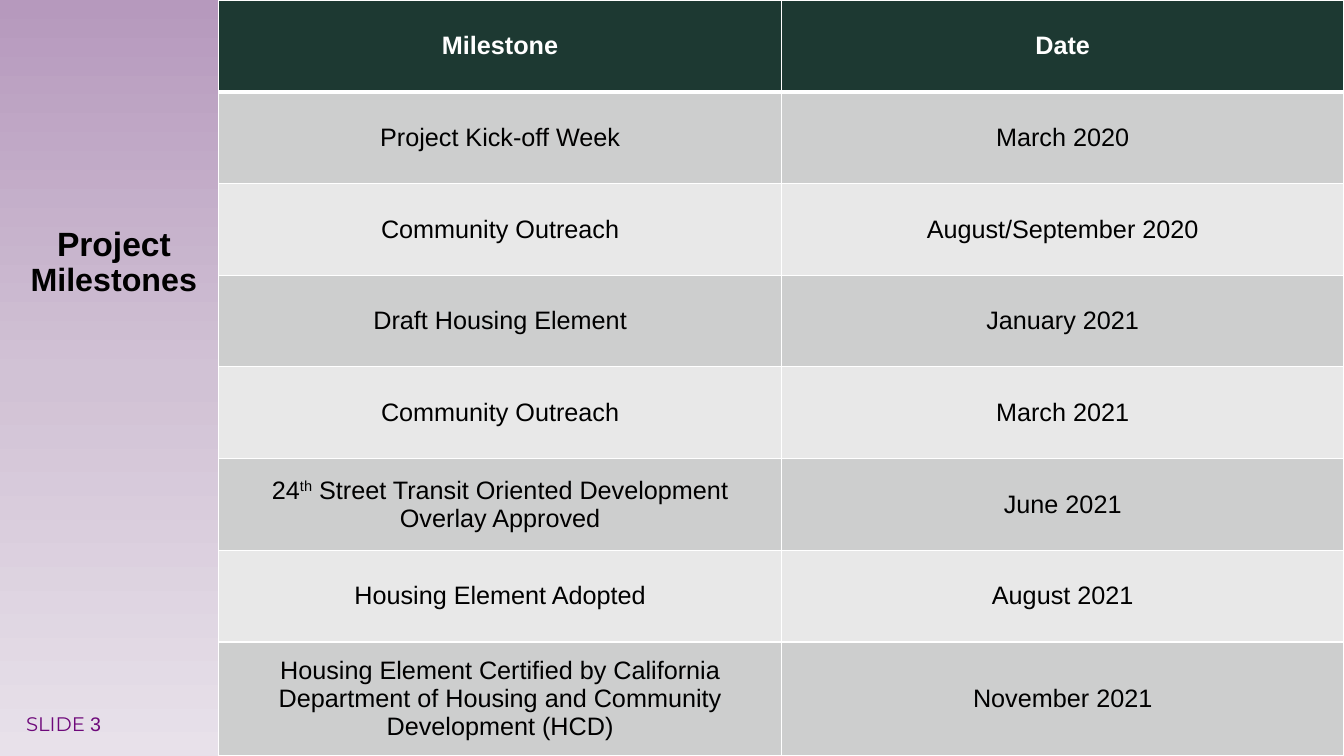
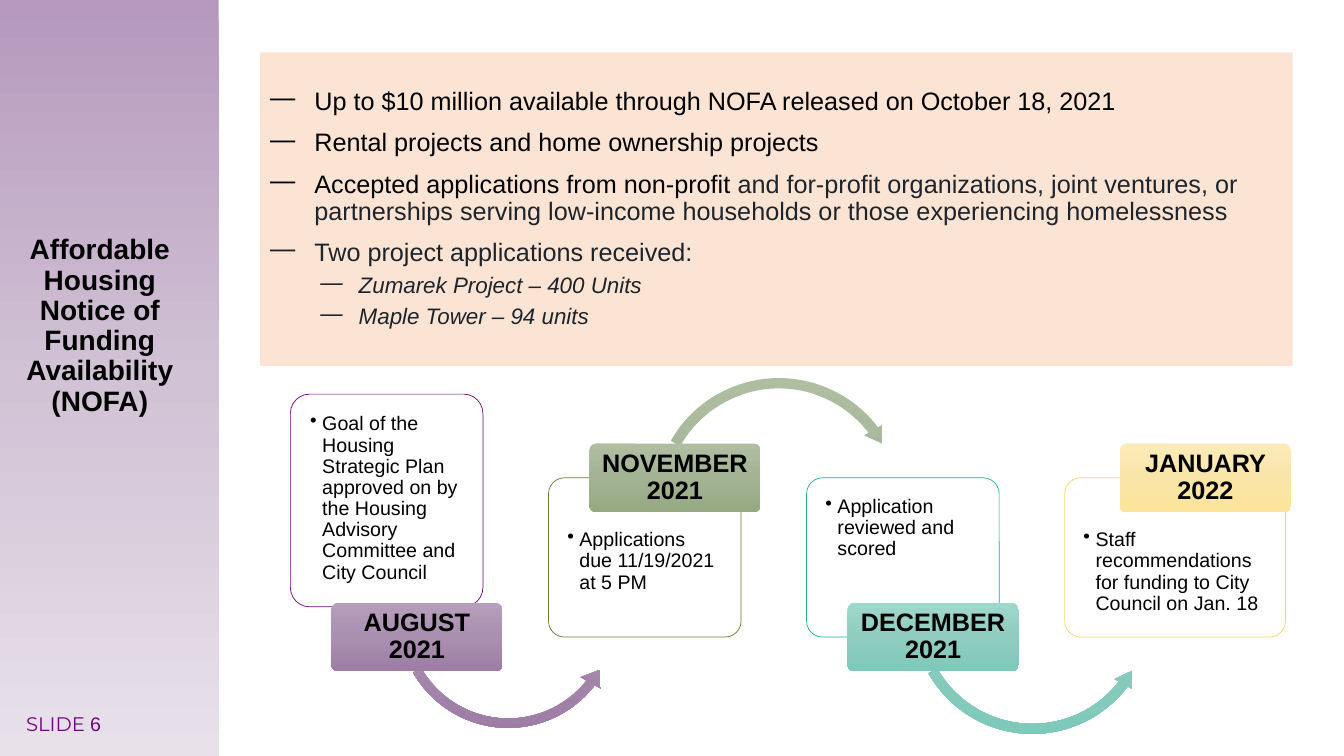
from lxml import etree
from pptx import Presentation
from pptx.dml.color import RGBColor
from pptx.enum.shapes import MSO_SHAPE
from pptx.enum.text import MSO_ANCHOR, PP_ALIGN
from pptx.oxml.ns import qn
from pptx.util import Inches, Pt

RECT, ROUND = MSO_SHAPE.RECTANGLE, MSO_SHAPE.ROUNDED_RECTANGLE
ARC_UP, ARC_DOWN = MSO_SHAPE.CIRCULAR_ARROW, MSO_SHAPE.LEFT_CIRCULAR_ARROW
TOP, MIDDLE, BOTTOM = MSO_ANCHOR.TOP, MSO_ANCHOR.MIDDLE, MSO_ANCHOR.BOTTOM
LEFT, CENTER = PP_ALIGN.LEFT, PP_ALIGN.CENTER

# Shared theme
W, H = 13.33, 7.5
BAND_W = 2.17
FONT, FOOTER_FONT = "Arial", "Montserrat"
BLACK, WHITE, INK, PURPLE = "000000", "FFFFFF", "1E242B", "6E087A"
BAND_STOPS = ("B699BD", "D1C2D5", "E8E1EA")
HEADER, ROW_DARK, ROW_LIGHT, PEACH = "1D3932", "CDCECE", "E8E8E8", "FBE4D3"

# Timeline measures
CARD_W, PILL_W, PILL_H = 1.91, 1.7, 0.68
PILL_SHIFT = 0.3  # pill centre, right of the card centre
BULLET_INSET = 0.14


def rgb(value):
    return RGBColor.from_string(value)


def style(r, size, color=BLACK, bold=False, italic=False, font=FONT):
    f = r.font
    f.name, f.size, f.bold, f.italic = font, Pt(size), bold, italic
    f.color.rgb = rgb(color)


def add_run(p, text, size, **look):
    r = p.add_run()
    r.text = text
    style(r, size, **look)
    return r


def set_frame(tf, anchor=TOP, insets=(0.1, 0.05, 0.1, 0.05)):
    tf.word_wrap = True
    tf.vertical_anchor = anchor
    tf.margin_left, tf.margin_top, tf.margin_right, tf.margin_bottom = map(Inches, insets)
    return tf


def set_bullet(p, char, margin, hang):
    pPr = p._p.get_or_add_pPr()
    pPr.set("marL", str(Inches(margin)))
    pPr.set("indent", str(-Inches(hang)))
    etree.SubElement(pPr, qn("a:buChar")).set("char", char)


def set_gradient(sp, stops):
    """Fill from top to bottom with evenly spaced stops."""
    sp.fill.gradient()
    sp.fill.gradient_angle = 270
    gs_lst = sp._element.spPr.find(".//" + qn("a:gsLst"))
    for gs in list(gs_lst):
        gs_lst.remove(gs)
    for i, color in enumerate(stops):
        gs = etree.SubElement(gs_lst, qn("a:gs"))
        gs.set("pos", str(100000 * i // (len(stops) - 1)))
        etree.SubElement(gs, qn("a:srgbClr")).set("val", color)


def add_shape(s, kind, box, fill, line=None, adj=()):
    """Add a preset shape; a tuple as fill gives a gradient."""
    sp = s.shapes.add_shape(kind, *map(Inches, box))
    sp.shadow.inherit = False
    for i, value in enumerate(adj):
        sp.adjustments[i] = value
    if isinstance(fill, tuple):
        set_gradient(sp, fill)
    else:
        sp.fill.solid()
        sp.fill.fore_color.rgb = rgb(fill)
    if line:
        sp.line.color.rgb = rgb(line)
        sp.line.width = Pt(0.5)
    else:
        sp.line.fill.background()
    return sp


def add_sidebar(s, number, title_runs, box, anchor):
    """Purple band, slide title and footer."""
    add_shape(s, RECT, (0, 0, BAND_W, H), BAND_STOPS)
    footer = s.shapes.add_textbox(*map(Inches, (0.16, 7.01, 1.9, 0.34)))
    p = set_frame(footer.text_frame).paragraphs[0]
    add_run(p, "SLIDE ", 14, color=PURPLE, font=FOOTER_FONT)
    add_run(p, str(number), 14, color=PURPLE)
    title = s.shapes.add_textbox(*map(Inches, box))
    p = set_frame(title.text_frame, anchor).paragraphs[0]
    p.alignment, p.line_spacing = CENTER, 0.9
    for text, size in title_runs:
        add_run(p, text, size, bold=True)


def fill_cell(cell, parts, fill, color, bold, bottom):
    """Parts alternate between normal and superscript text."""
    cell.vertical_anchor = MIDDLE
    p = cell.text_frame.paragraphs[0]
    p.alignment = CENTER
    for i, part in enumerate(parts):
        r = add_run(p, part, 18, color=color, bold=bold)
        if i % 2:
            r._r.get_or_add_rPr().set("baseline", "30000")
    tcPr = cell._tc.get_or_add_tcPr()
    for side, width in (("L", 1), ("R", 1), ("T", 1), ("B", bottom)):
        ln = etree.SubElement(tcPr, qn("a:ln" + side), w=str(Pt(width)))
        solid = etree.SubElement(ln, qn("a:solidFill"))
        etree.SubElement(solid, qn("a:srgbClr"), val=WHITE)
    cell.fill.solid()
    cell.fill.fore_color.rgb = rgb(fill)


def add_milestone_table(s, box, rows, row_h):
    """Equal rows; the last takes the remaining height."""
    x, y, w, h = box
    table = s.shapes.add_table(len(rows), 2, *map(Inches, box)).table
    for col in table.columns:
        col.width = Inches(w / 2)
    for i, row in enumerate(rows):
        last = i == len(rows) - 1
        table.rows[i].height = Inches(h - row_h * i if last else row_h)
        fill = HEADER if i == 0 else ROW_DARK if i % 2 else ROW_LIGHT
        for j, text in enumerate(row):
            parts = text if isinstance(text, tuple) else (text,)
            fill_cell(table.cell(i, j), parts, fill, BLACK if i else WHITE,
                      i == 0, 1 if i else 3)


def add_funding_panel(s, box, items):
    """Peach panel of dashed items: (level, runs of text and colour)."""
    sp = add_shape(s, RECT, box, PEACH)
    tf = set_frame(sp.text_frame, MIDDLE)
    for i, (level, runs) in enumerate(items):
        p = tf.paragraphs[0] if i == 0 else tf.add_paragraph()
        p.alignment, p.line_spacing = LEFT, 0.9
        if i:
            p.space_before = Pt(5 if level else 10)
        set_bullet(p, "—", *((0.88, 0.38) if level else (0.44, 0.44)))
        for text, color in runs:
            add_run(p, text, 16 if level else 18, color=color, italic=bool(level))


def add_stage(s, box, month, note, line, stops, pill_on_top, arc):
    """Outlined card with its month pill and the arrow to the next stage."""
    x, y, w, h = box
    # Card
    card = add_shape(s, ROUND, box, WHITE, line, (0.1,))
    top = BULLET_INSET + (0.33 if pill_on_top else 0)
    tf = set_frame(card.text_frame, TOP, (BULLET_INSET, top, BULLET_INSET, BULLET_INSET))
    p = tf.paragraphs[0]
    p.alignment, p.line_spacing = LEFT, 0.9
    set_bullet(p, "•", 0.12, 0.12)
    add_run(p, note, 14)
    # Arrow
    pill_x = x + w / 2 + PILL_SHIFT - PILL_W / 2
    pill_y = 4.4 if pill_on_top else 5.98
    if arc:
        rise, size, adj = arc
        add_shape(s, ARC_UP if pill_on_top else ARC_DOWN,
                  (pill_x + 0.6, pill_y - rise, size, size), stops, adj=adj)
    # Month pill
    pill = add_shape(s, ROUND, (pill_x, pill_y, PILL_W, PILL_H), stops, adj=(0.1,))
    tf = set_frame(pill.text_frame, MIDDLE, (0.04, 0.03, 0.04, 0.03))
    p = tf.paragraphs[0]
    p.alignment, p.line_spacing = CENTER, 0.9
    add_run(p, month, 18, bold=True)


MILESTONES = [
    ("Milestone", "Date"),
    ("Project Kick-off Week", "March 2020"),
    ("Community Outreach", "August/September 2020"),
    ("Draft Housing Element", "January 2021"),
    ("Community Outreach", "March 2021"),
    (("24", "th", " Street Transit Oriented Development Overlay Approved"), "June 2021"),
    ("Housing Element Adopted", "August 2021"),
    ("Housing Element Certified by California Department of Housing and "
     "Community Development (HCD)", "November 2021"),
]

FUNDING = [
    (0, [("Up to $10 million available through NOFA released on October 18, 2021", BLACK)]),
    (0, [("Rental projects and home ownership projects", BLACK)]),
    (0, [("Accepted applications from non-profit ", BLACK),
         ("and for-profit organizations, joint ventures, or partnerships serving "
          "low-income households or those experiencing homelessness", INK)]),
    (0, [("Two project applications received:", INK)]),
    (1, [("Zumarek Project – 400 Units", INK)]),
    (1, [("Maple Tower – 94 units", INK)]),
]

# Month, note, outline, pill gradient, pill on top, card top, height, width,
# arrow (rise above the pill, size, adjustments)
STAGES = [
    ("AUGUST 2021",
     "Goal of the Housing Strategic Plan approved on by the Housing Advisory "
     "Committee and City Council",
     PURPLE, ("B59DBB", "AA90B0", "9E7CA6"), False, 3.91, 2.11, CARD_W,
     (1, 2.31, (0.04, 5.08, 22.8, 90.21, 0.05))),
    ("NOVEMBER 2021", "Applications due 11/19/2021 at 5 PM",
     "618032", ("AFBEA1", "A3B394", "95A981"), True, 4.74, 1.58, CARD_W,
     (0.7, 2.56, (0.04, 4.55, 193.69, 125.76, 0.04))),
    ("DECEMBER 2021", "Application reviewed and scored",
     "1BAA98", ("9ED7CB", "91CCC1", "7DC9BA"), False, 4.74, 1.58, CARD_W,
     (1.12, 2.47, (0.04, 4.73, 22.48, 90.25, 0.04))),
    ("JANUARY 2022", "Staff recommendations for funding to City Council on Jan. 18",
     "F5D566", ("FCEBB9", "FAE5A9", "FCE49A"), True, 4.74, 1.58, 2.19, None),
]


def milestones_slide(prs):
    s = prs.slides.add_slide(prs.slide_layouts[6])
    add_sidebar(s, 3, [("Project ", 24), ("Milestones", 23)],
                (0.19, 0.3, 1.88, 2.71), BOTTOM)
    add_milestone_table(s, (BAND_W, 0, W - BAND_W, H), MILESTONES, 0.91)


def nofa_slide(prs):
    s = prs.slides.add_slide(prs.slide_layouts[6])
    add_sidebar(s, 6, [("Affordable Housing Notice of Funding Availability (NOFA)", 20)],
                (0.08, 2.29, 1.82, 1.9), TOP)
    add_funding_panel(s, (2.58, 0.52, 10.24, 3.11), FUNDING)
    for i, (month, note, line, stops, on_top, y, h, w, arc) in enumerate(STAGES):
        add_stage(s, (2.88 + 2.56 * i, y, w, h), month, note, line, stops, on_top, arc)


def main():
    prs = Presentation()
    prs.slide_width, prs.slide_height = Inches(W), Inches(H)
    milestones_slide(prs)
    nofa_slide(prs)
    prs.save("out.pptx")


if __name__ == "__main__":
    main()
